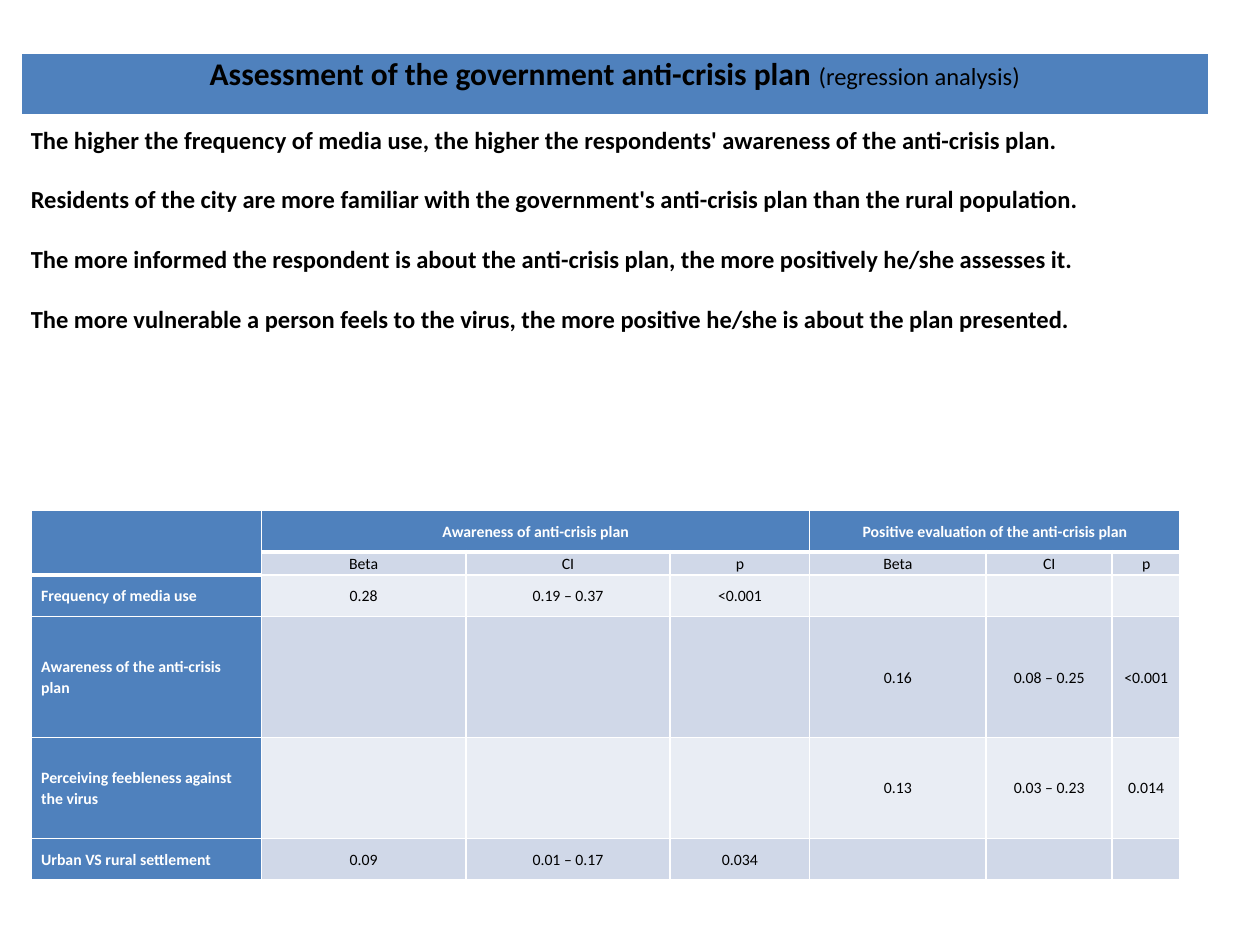
import pptx
import pptx.util
import pptx.dml.color
import pptx.enum.text
import pptx.oxml
import pptx.oxml.ns

Cm = pptx.util.Cm
Pt = pptx.util.Pt
ALIGN = pptx.enum.text.PP_ALIGN
ANCHOR = pptx.enum.text.MSO_ANCHOR

THEME = {
    "font": "Calibri",
    "blue": "4F81BD", "band_dark": "D0D8E8", "band_light": "E9EDF4",
    "white": "FFFFFF", "black": "000000",
    "title": 18, "body": 14, "table": 9,
    "line_spacing": 1.07, "thin": 1, "thick": 3, "inset": 0.19,
}

TITLE = "Assessment of the government anti-crisis plan "
SUBTITLE = "(regression analysis)"
FINDINGS = [
    "The higher the frequency of media use, the higher the respondents' awareness of the anti-crisis plan.",
    "Residents of the city are more familiar with the government's anti-crisis plan than the rural population.",
    "The more informed the respondent is about the anti-crisis plan, the more positively he/she assesses it.",
    "The more vulnerable a person feels to the virus, the more positive he/she is about the plan presented.",
]
REGRESSION = [
    ["", "Awareness of anti-crisis plan", "", "", "Positive evaluation of the anti-crisis plan", "", ""],
    ["", "Beta", "CI", "p", "Beta", "CI", "p"],
    ["Frequency of media use", "0.28", "0.19 – 0.37", "<0.001", "", "", ""],
    ["Awareness of the anti-crisis plan", "", "", "", "0.16", "0.08 – 0.25", "<0.001"],
    ["Perceiving feebleness against the virus", "", "", "", "0.13", "0.03 – 0.23", "0.014"],
    ["Urban VS rural settlement", "0.09", "0.01 – 0.17", "0.034", "", "", ""],
]
MERGES = [((0, 0), (1, 0)), ((0, 1), (0, 3)), ((0, 4), (0, 6))]
COLUMN_WIDTHS = [4.63, 4.12, 4.12, 2.81, 3.56, 2.54, 1.37]
ROW_HEIGHTS = [0.84, 0.46, 0.84, 2.44, 2.03, 0.84]


def rgb(name):
    return pptx.dml.color.RGBColor.from_string(THEME[name])


def write(paragraph, text, size="table", color="black", bold=False, align=ALIGN.LEFT, spacing=None):
    paragraph.alignment = align
    paragraph.line_spacing = spacing
    if not text:
        paragraph._p.append(pptx.oxml.parse_xml(
            f'<a:endParaRPr {pptx.oxml.ns.nsdecls("a")} sz="{THEME[size] * 100}"/>'))
        return
    run = paragraph.add_run()
    run.text = text
    run.font.name = THEME["font"]
    run.font.size = Pt(THEME[size])
    run.font.bold = bold
    run.font.color.rgb = rgb(color)


def add_table(slide, left, top, widths, heights):
    table = slide.shapes.add_table(
        len(heights), len(widths), Cm(left), Cm(top), Cm(sum(widths)), Cm(sum(heights))).table
    table.first_row = table.horz_banding = False
    for column, width in zip(table.columns, widths):
        column.width = Cm(width)
    for row, height in zip(table.rows, heights):
        row.height = Cm(height)
    return table


def style_cell(cell, fill, top="thin", bottom="thick", anchor=ANCHOR.TOP):
    cell.margin_left = cell.margin_right = Cm(THEME["inset"])
    cell.margin_top = cell.margin_bottom = 0
    cell.vertical_anchor = anchor
    for side, weight in {"lnL": "thin", "lnR": "thin", "lnT": top, "lnB": bottom}.items():
        cell._tc.get_or_add_tcPr().append(pptx.oxml.parse_xml(
            f'<a:{side} {pptx.oxml.ns.nsdecls("a")} w="{Pt(THEME[weight])}"><a:solidFill>'
            f'<a:srgbClr val="{THEME["white"]}"/></a:solidFill></a:{side}>'))
    cell.fill.solid()
    cell.fill.fore_color.rgb = rgb(fill)


def add_title(slide):
    cell = add_table(slide, 0.43, 1.07, [23.93], [1.27]).cell(0, 0)
    style_cell(cell, "blue")
    paragraph = cell.text_frame.paragraphs[0]
    for text, size, bold in [(TITLE, "title", True), (SUBTITLE, "body", False)]:
        write(paragraph, text, size=size, bold=bold, align=ALIGN.CENTER, spacing=THEME["line_spacing"])


def add_findings(slide):
    cell = add_table(slide, 0.43, 2.54, [23.93], [7.52]).cell(0, 0)
    style_cell(cell, "white")
    frame = cell.text_frame
    for index, finding in enumerate(FINDINGS):
        paragraph = frame.add_paragraph() if index else frame.paragraphs[0]
        write(paragraph, finding, size="body", bold=True)
        paragraph.space_after = Pt(17)


def add_regression(slide):
    table = add_table(slide, 0.64, 10.29, COLUMN_WIDTHS, ROW_HEIGHTS)
    for first, last in MERGES:
        table.cell(*first).merge(table.cell(*last))
    for r, values in enumerate(REGRESSION):
        for c, text in enumerate(values):
            cell = table.cell(r, c)
            heading = r == 0 or c == 0
            last_heading_row = 0 if c else 1
            style_cell(cell,
                       "blue" if heading else "band_dark" if r % 2 else "band_light",
                       top="thick" if r == last_heading_row + 1 else "thin",
                       bottom="thick" if r <= last_heading_row else "thin",
                       anchor=ANCHOR.MIDDLE)
            write(cell.text_frame.paragraphs[0], text,
                  color="white" if heading else "black", bold=heading,
                  align=ALIGN.CENTER if c else ALIGN.LEFT, spacing=THEME["line_spacing"])


def main():
    deck = pptx.Presentation()
    deck.slide_width, deck.slide_height = Cm(25.4), Cm(19.05)
    slide = deck.slides.add_slide(deck.slide_layouts[6])
    add_title(slide)
    add_findings(slide)
    add_regression(slide)
    deck.save("out.pptx")


if __name__ == "__main__":
    main()
